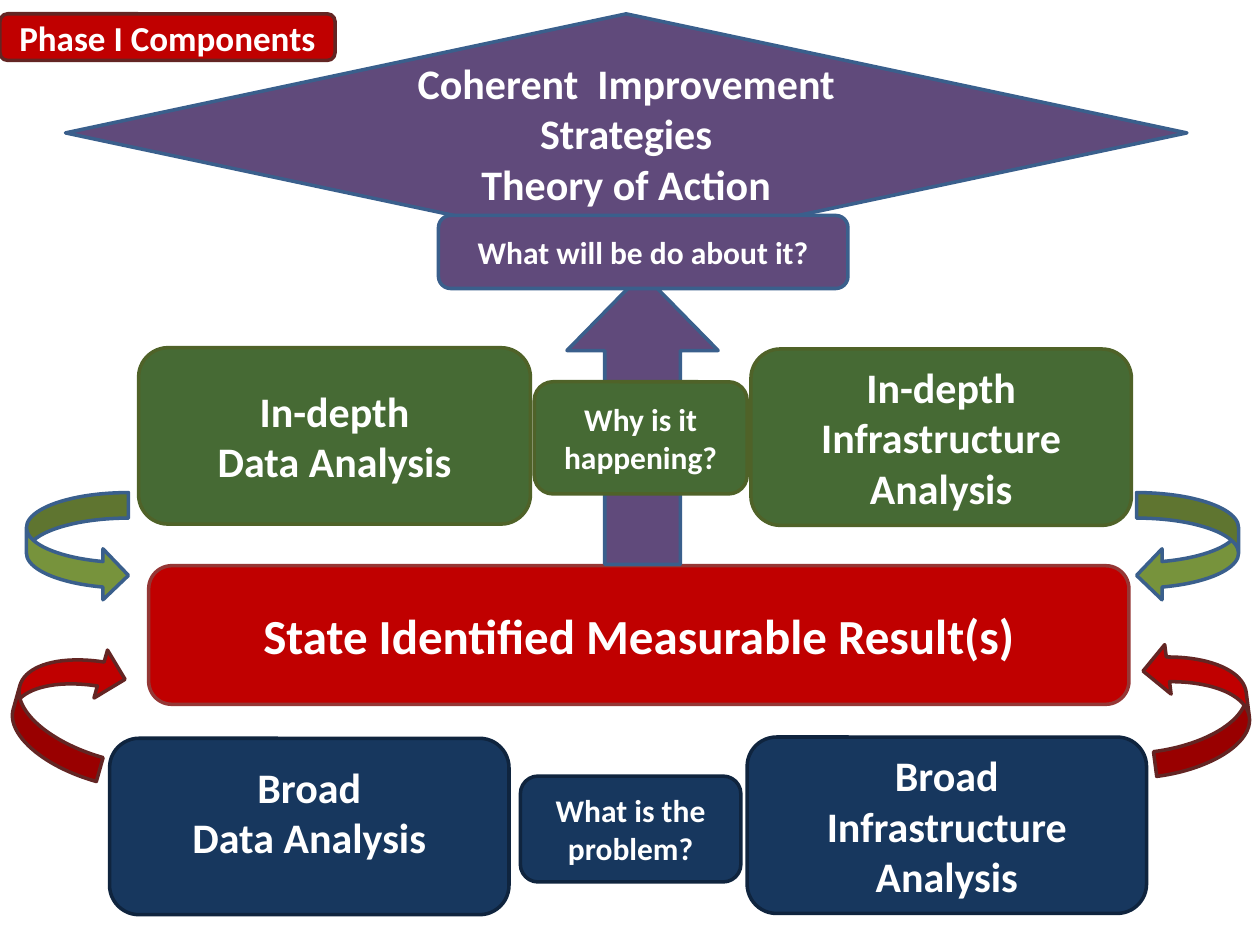
import pptx
import pptx.util
from pptx.dml.color import RGBColor
from pptx.enum.shapes import MSO_SHAPE
from pptx.enum.text import MSO_ANCHOR, PP_ALIGN

WIDTH, HEIGHT = pptx.util.Inches(10), pptx.util.Inches(7.5)
COLS, ROWS = 100, 75

# Each theme is a fill and a line colour.
PURPLE = ("604A7B", "3A5F8C")
GREEN = ("466A34", "4F6228")
LIME = ("77933C", "3A5F8C")
RED = ("C00000", "632523")
RESULT_RED = ("C00000", "953735")
NAVY = ("17375E", "0F243E")


def rgb(code):
    return RGBColor.from_string(code)


def col(n):
    return round(WIDTH * n / COLS)


def row(n):
    return round(HEIGHT * n / ROWS)


def add_figure(slide, kind, cell, theme, rotation=0):
    """Place a preset shape; cell is left, top, width, height in grid units."""
    left, top, width, height = cell
    sp = slide.shapes.add_shape(kind, col(left), row(top), col(width), row(height))
    fill, line = theme
    sp.shadow.inherit = False
    sp.fill.solid()
    sp.fill.fore_color.rgb = rgb(fill)
    sp.line.color.rgb = rgb(line)
    sp.line.width = pptx.util.Pt(2)
    sp.rotation = rotation
    return sp


def write(sp, lines, size):
    tf = sp.text_frame
    tf.word_wrap = True
    tf.vertical_anchor = MSO_ANCHOR.MIDDLE
    for i, text in enumerate(lines):
        p = tf.add_paragraph() if i else tf.paragraphs[0]
        p.text = text
        p.alignment = PP_ALIGN.CENTER
        p.font.name = "Calibri"
        p.font.size = pptx.util.Pt(size)
        p.font.bold = True
        p.font.color.rgb = rgb("FFFFFF")


def add_box(slide, cell, theme, lines, size):
    sp = add_figure(slide, MSO_SHAPE.ROUNDED_RECTANGLE, cell, theme)
    write(sp, lines, size)
    return sp


def add_strategies(slide):
    diamond = add_figure(slide, MSO_SHAPE.FLOWCHART_DECISION,
                         (5.2, 1.1, 89, 18.9), PURPLE)
    write(diamond, ["Coherent  Improvement Strategies", "Theory of Action"], 24)
    arrow = add_figure(slide, MSO_SHAPE.UP_ARROW, (45, 21.7, 12, 23.1), PURPLE)
    arrow.adjustments[1] = 0.51


def add_side_arrows(slide):
    right, left = MSO_SHAPE.CURVED_RIGHT_ARROW, MSO_SHAPE.CURVED_LEFT_ARROW
    for kind, x in ((right, 2.1), (left, 90.2)):
        add_figure(slide, kind, (x, 39.1, 8.1, 8.6), LIME)
    for kind, x, rotation in ((right, 91.1, 172.6), (left, 1.3, 195.7)):
        add_figure(slide, kind, (x, 50.75, 7.9, 10.4), RED, rotation)


def main():
    prs = pptx.Presentation()
    prs.slide_width, prs.slide_height = WIDTH, HEIGHT
    slide = prs.slides.add_slide(prs.slide_layouts[6])

    add_box(slide, (11.8, 44.9, 77.8, 11), RESULT_RED,
            ["State Identified Measurable Result(s)"], 28)
    add_strategies(slide)
    add_box(slide, (11, 27.6, 31.1, 14), GREEN, ["In-depth", "Data Analysis"], 24)
    add_box(slide, (59.6, 27.7, 30.2, 14), GREEN,
            ["In-depth", "Infrastructure Analysis"], 24)
    add_box(slide, (0, 1.1, 26.6, 3.7), RED, ["Phase I Components"], 20)
    add_side_arrows(slide)

    add_box(slide, (41.3, 61.6, 17.5, 8.4), NAVY, ["What is the problem?"], 18)
    broad_data = add_box(slide, (8.7, 58.6, 31.7, 14), NAVY,
                         ["Broad", "Data Analysis"], 24)
    broad_data.text_frame.margin_bottom = row(2.8)
    add_box(slide, (59.3, 58.5, 31.7, 14), NAVY,
            ["Broad", "Infrastructure Analysis"], 24)
    add_box(slide, (42.4, 30.3, 16.9, 8.9), GREEN, ["Why is it happening?"], 18)
    add_box(slide, (34.8, 17.1, 32.5, 5.8), PURPLE, ["What will be do about it?"], 18)

    prs.save("out.pptx")


if __name__ == "__main__":
    main()
